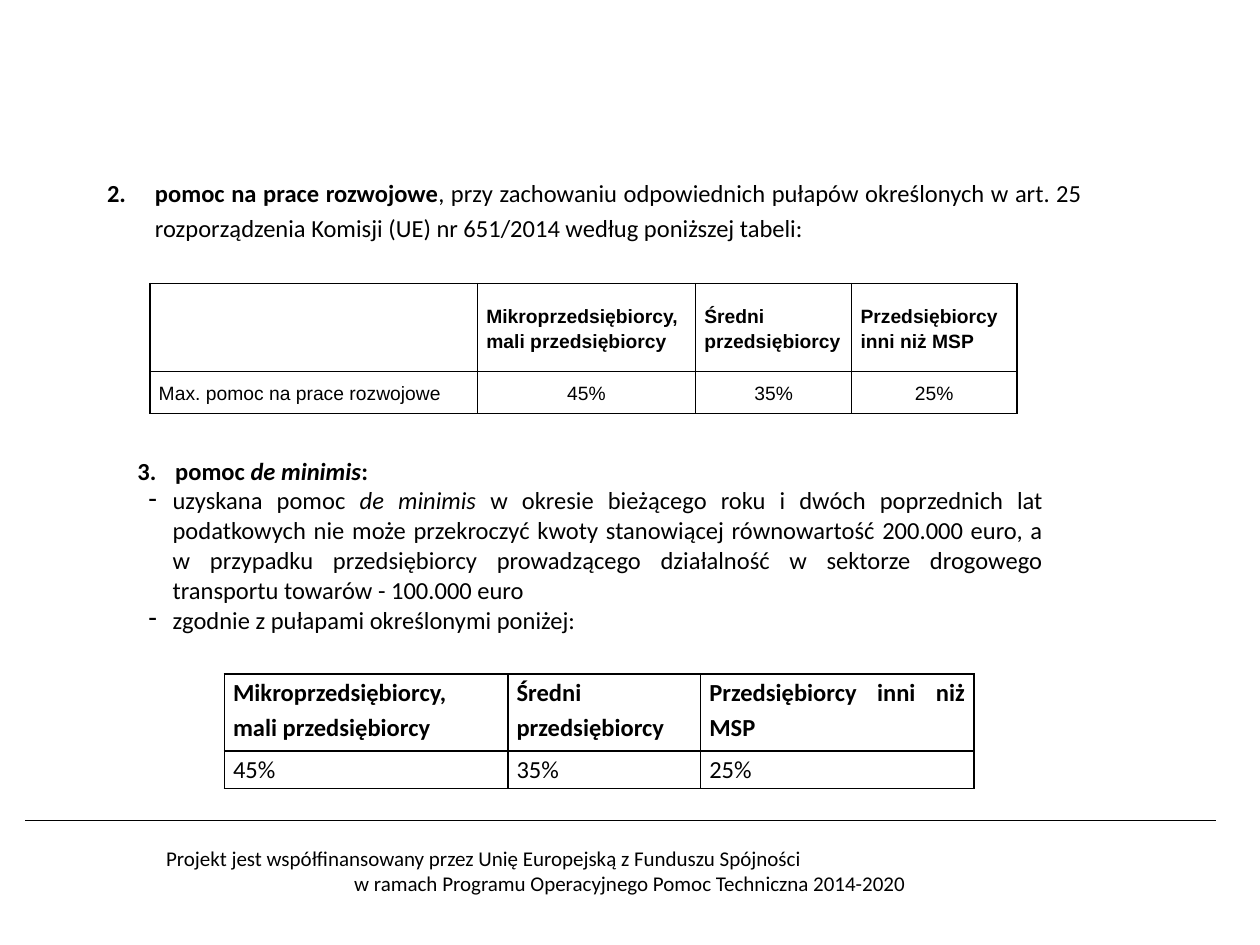
from dataclasses import dataclass
from typing import Optional

from pptx import Presentation
from pptx import util as u
from pptx.dml import color
from pptx.enum import shapes, text
from pptx.oxml import ns
from lxml import etree

COLORS = {"ink": "000000", "paper": "FFFFFF"}
LEFT = text.PP_ALIGN.LEFT
CENTER = text.PP_ALIGN.CENTER
JUSTIFY = text.PP_ALIGN.JUSTIFY


@dataclass
class Run:
    content: str
    bold: bool = False
    italic: bool = False


@dataclass
class Line:
    runs: list[Run]
    align: text.PP_ALIGN = JUSTIFY
    spacing: Optional[float] = 1.15
    margin: float = 0
    indent: float = 0
    number: Optional[int] = None
    dash: bool = False


@dataclass
class Grid:
    left: float
    top: float
    columns: list[float]
    rows: list[float]
    cells: list[list[list[Line]]]
    font: str = "Calibri"
    size: float = 14
    padding: float = 0.07
    anchor: text.MSO_ANCHOR = text.MSO_ANCHOR.TOP
    border: bool = True


def rgb(name: str) -> color.RGBColor:
    return color.RGBColor.from_string(COLORS[name])


def plain(content: str, bold: bool = False, align: text.PP_ALIGN = JUSTIFY) -> Line:
    return Line([Run(content, bold)], align)


def write(frame, lines: list[Line], *, font: str, size: float) -> None:
    frame.word_wrap = True
    for index, line in enumerate(lines):
        paragraph = frame.add_paragraph() if index else frame.paragraphs[0]
        paragraph.alignment = line.align
        if line.spacing:
            paragraph.line_spacing = line.spacing
        properties = paragraph._p.get_or_add_pPr()
        properties.set("marL", str(u.Inches(line.margin)))
        properties.set("indent", str(u.Inches(line.indent)))
        if line.number:
            etree.SubElement(properties, ns.qn("a:buAutoNum"),
                             type="arabicPeriod", startAt=str(line.number))
        elif line.dash:
            etree.SubElement(properties, ns.qn("a:buChar"), char="-")
        else:
            etree.SubElement(properties, ns.qn("a:buNone"))
        for part in line.runs:
            run = paragraph.add_run()
            run.text = part.content
            run.font.name = font
            run.font.size = u.Pt(size)
            run.font.bold = part.bold
            run.font.italic = part.italic
            run.font.color.rgb = rgb("ink")


def set_borders(cell, visible: bool) -> None:
    properties = cell._tc.get_or_add_tcPr()
    for side in ("lnL", "lnR", "lnT", "lnB"):
        edge = etree.SubElement(properties, ns.qn(f"a:{side}"), w=str(u.Pt(1)))
        if visible:
            fill = etree.SubElement(edge, ns.qn("a:solidFill"))
            etree.SubElement(fill, ns.qn("a:srgbClr"), val=COLORS["ink"])
        else:
            etree.SubElement(edge, ns.qn("a:noFill"))


def draw_grid(slide, grid: Grid) -> None:
    shape = slide.shapes.add_table(
        len(grid.rows), len(grid.columns), u.Inches(grid.left), u.Inches(grid.top),
        u.Inches(sum(grid.columns)), u.Inches(sum(grid.rows)))
    table = shape.table
    table.first_row = False
    table.horz_banding = False
    for column, width in zip(table.columns, grid.columns):
        column.width = u.Inches(width)
    for row, height, contents in zip(table.rows, grid.rows, grid.cells):
        row.height = u.Inches(height)
        for cell, lines in zip(row.cells, contents):
            cell.margin_left = cell.margin_right = u.Inches(grid.padding)
            cell.margin_top = cell.margin_bottom = 0
            cell.vertical_anchor = grid.anchor
            set_borders(cell, grid.border)
            cell.fill.background()
            write(cell.text_frame, lines, font=grid.font, size=grid.size)


def draw_footer(slide) -> None:
    shape = slide.shapes.add_shape(
        shapes.MSO_SHAPE.RECTANGLE,
        u.Inches(1.22), u.Inches(6.66), u.Inches(7.56), u.Inches(0.5))
    shape.shadow.inherit = False
    shape.fill.solid()
    shape.fill.fore_color.rgb = rgb("paper")
    shape.line.color.rgb = rgb("paper")
    shape.line.width = u.Pt(0.25)
    write(shape.text_frame, [
        Line([Run("Projekt jest współfinansowany przez Unię Europejską z Funduszu Spójności")],
             LEFT, None),
        Line([Run("w ramach Programu Operacyjnego Pomoc Techniczna 2014-2020")], CENTER, None),
    ], font="Calibri", size=12)

    rule = slide.shapes.add_connector(
        shapes.MSO_CONNECTOR.STRAIGHT,
        u.Inches(0.2), u.Inches(6.51), u.Inches(9.65), u.Inches(6.51))
    rule.line.color.rgb = rgb("ink")
    rule.line.width = u.Pt(0.75)
    etree.SubElement(rule._element.spPr, ns.qn("a:effectLst"))


DE_MINIMIS = [
    Line([Run("pomoc ", True), Run("de minimis", True, True), Run(":", True)],
         margin=0.3, indent=-0.3, number=3),
    Line([Run("uzyskana pomoc "), Run("de minimis ", italic=True),
          Run("w okresie bieżącego roku i dwóch poprzednich lat podatkowych nie może "
              "przekroczyć kwoty stanowiącej równowartość 200.000 euro, a w przypadku "
              "przedsiębiorcy prowadzącego działalność w sektorze drogowego transportu "
              "towarów - 100.000 euro")],
         spacing=None, margin=0.28, indent=-0.19, dash=True),
    Line([Run("zgodnie z pułapami określonymi poniżej:")],
         spacing=None, margin=0.28, indent=-0.19, dash=True),
]
DEVELOPMENT_AID = [
    Line([Run("pomoc na prace rozwojowe", True),
          Run(", przy zachowaniu odpowiednich pułapów określonych w art. 25 rozporządzenia "
              "Komisji (UE) nr 651/2014 według poniższej tabeli:")],
         margin=0.38, indent=-0.38, number=2),
]
MEDIUM = [plain("Średni przedsiębiorcy", True)]
LARGE = [plain("Przedsiębiorcy inni niż MSP", True)]
LIMITS = ("45%", "35%", "25%")

GRIDS = [
    Grid(0.99, 3.59, [7.39], [1.44], [[DE_MINIMIS]], padding=0.1, border=False),
    Grid(1.78, 5.35, [2.25, 1.53, 2.17], [0.61, 0.3], [
        [[plain("Mikroprzedsiębiorcy,", True), plain("mali przedsiębiorcy", True)],
         MEDIUM, LARGE],
        [[plain(limit, align=LEFT)] for limit in LIMITS],
    ]),
    Grid(0.75, 1.39, [7.94], [0.54], [[DEVELOPMENT_AID]], padding=0.1, border=False),
    Grid(1.19, 2.25, [2.6, 1.73, 1.24, 1.31], [0.7, 0.33], [
        [[], [plain("Mikroprzedsiębiorcy, mali przedsiębiorcy", True)], MEDIUM, LARGE],
        [[plain("Max. pomoc na prace rozwojowe")],
         *([plain(limit, align=CENTER)] for limit in LIMITS)],
    ], font="Arial", size=11, anchor=text.MSO_ANCHOR.MIDDLE),
]


def main() -> None:
    presentation = Presentation()
    presentation.slide_width = u.Inches(10)
    presentation.slide_height = u.Inches(7.5)
    slide = presentation.slides.add_slide(presentation.slide_layouts[6])
    draw_footer(slide)
    for grid in GRIDS:
        draw_grid(slide, grid)
    presentation.save("out.pptx")


if __name__ == "__main__":
    main()
